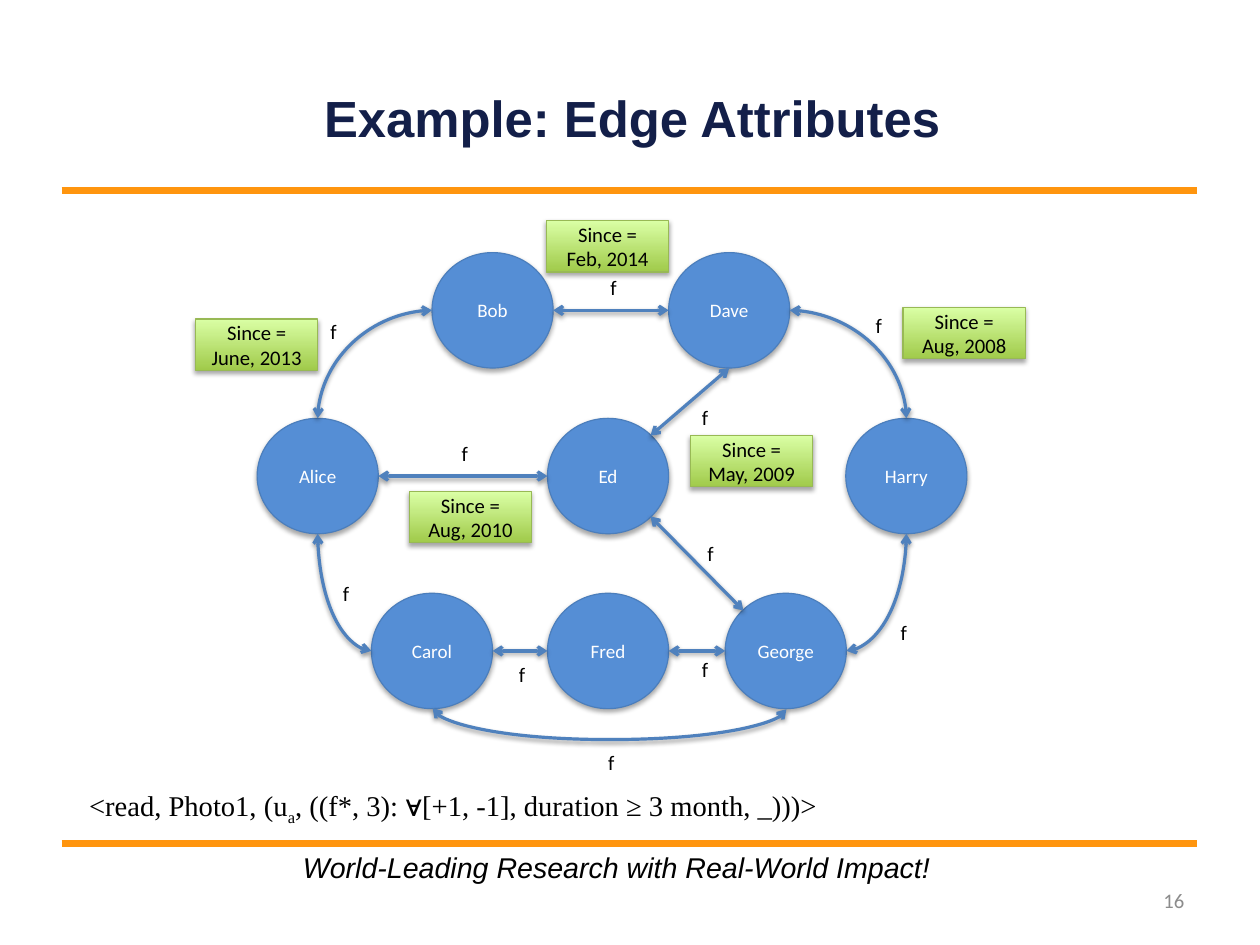
from lxml.etree import SubElement
from pptx import Presentation
from pptx.dml.color import RGBColor
from pptx.enum.shapes import MSO_CONNECTOR, MSO_SHAPE
from pptx.enum.text import MSO_ANCHOR, PP_ALIGN
from pptx.oxml.ns import qn
from pptx.util import Cm, Inches, Pt

WIDE, HIGH = Cm(28), Cm(21)
CELL = 0.1
DISC = (10.6, 10.1)
NOTE = (10.7, 4.5)
BLUE = "4F81BD"
SIDES = {"top": (0.5, 0), "left": (0, 0.5), "base": (0.5, 1), "right": (1, 0.5),
         "high": (0.85, 0.15), "low": (0.85, 0.85), "near": (0.15, 0.15)}
NODES = {"George": (46.35, 32.6), "Fred": (30.8, 32.6), "Carol": (15.4, 32.6),
         "Harry": (56.9, 17.3), "Ed": (30.8, 17.3), "Alice": (5.4, 17.3),
         "Dave": (41.4, 2.8), "Bob": (20.7, 2.8)}
BENDS = [("Bob", "left", "Alice", "top"), ("Dave", "right", "Harry", "top"),
         ("Carol", "left", "Alice", "base"), ("George", "right", "Harry", "base")]
EDGES = [("Ed", "left", "Alice", "right"), ("Carol", "right", "Fred", "left"),
         ("Ed", "high", "Dave", "base"), ("George", "near", "Ed", "low"),
         ("George", "left", "Fred", "right"), ("Bob", "right", "Dave", "left")]
MARKS = [(10.9, 8.1), (35.4, 4.3), (58.6, 7.6), (60.8, 34.4), (22.4, 18.8), (12, 31),
         (43.4, 37.7), (43.9, 27.5), (35.2, 45.8), (27.4, 38.1), (43.4, 15.6)]
DATES = {"June, 2013": (0, 8.6), "Feb, 2014": (30.7, 0), "Aug, 2010": (18.7, 23.7),
         "May, 2009": (43.3, 18.8), "Aug, 2008": (61.9, 7.6)}


def tint(code):
    """Turn a hex string into a colour."""
    return RGBColor.from_string(code)


def spot(box, x, y):
    """Give the inches of a grid point inside a box."""
    return box[0] + x * CELL, box[1] + y * CELL


def style(frame, size, font, code, align=PP_ALIGN.LEFT, anchor=MSO_ANCHOR.TOP,
          pad=(0.11, 0.05), bold=False, slant=False):
    """Format all the text of a frame."""
    frame.margin_left = frame.margin_right = Inches(pad[0])
    frame.margin_top = frame.margin_bottom = Inches(pad[1])
    frame.vertical_anchor = anchor
    for para in frame.paragraphs:
        para.alignment = align
        for run in para.runs:
            run.font.size, run.font.name = Pt(size), font
            run.font.bold, run.font.italic = bold, slant
            run.font.color.rgb = tint(code)


def label(slide, box, text, size, font, code="000000", wrap=True, **look):
    """Add a text box."""
    frame = slide.shapes.add_textbox(*map(Inches, box)).text_frame
    frame.text = text
    frame.word_wrap = wrap
    style(frame, size, font, code, **look)
    return frame


def shade(item, alpha, drop):
    """Give a shape or line a soft shadow below it."""
    effect = SubElement(item._element.spPr, qn("a:effectLst"))
    cast = SubElement(effect, qn("a:outerShdw"), blurRad=str(Pt(3.1)), dist=str(Pt(drop)),
                      dir="5400000", rotWithShape="0")
    black = SubElement(cast, qn("a:srgbClr"), val="000000")
    SubElement(black, qn("a:alpha"), val=str(alpha * 1000))


def block(slide, kind, spot_at, size, text, points, code, edge):
    """Add a centred, shadowed shape with its text."""
    lengths = (*spot_at, size[0] * CELL, size[1] * CELL)
    shape = slide.shapes.add_shape(kind, *map(Inches, lengths))
    shape.line.color.rgb, shape.line.width = tint(edge), Pt(0.75)
    shade(shape, 35, 1.8)
    shape.text_frame.text = text
    shape.text_frame.word_wrap = True
    style(shape.text_frame, points, "Calibri", code, PP_ALIGN.CENTER, MSO_ANCHOR.MIDDLE)
    return shape


def arrow(slide, kind, start, end):
    """Add a line with an arrowhead at both ends."""
    line = slide.shapes.add_connector(kind, *map(Inches, (*start, *end)))
    line.line.color.rgb, line.line.width = tint(BLUE), Pt(2)
    for tip in ("a:headEnd", "a:tailEnd"):
        SubElement(line.line._get_or_add_ln(), qn(tip), type="arrow")
    shade(line, 38, 1.6)
    return line


def port(box, name, side):
    """Find the point on a side of a node."""
    return spot(box, *(at + share * size for at, share, size
                       in zip(NODES[name], SIDES[side], DISC)))


def loop(slide, box):
    """Add the curve that runs below Carol and George."""
    left, right = port(box, "Carol", "base"), port(box, "George", "base")
    mid, half = (left[0] + right[0]) / 2, (right[0] - left[0]) / 2
    line = arrow(slide, MSO_CONNECTOR.CURVE, (mid + 0.01, left[1] - half),
                 (mid, left[1] + half))
    form = line._element.spPr
    form.find(qn("a:xfrm")).set("rot", "16200000")
    geom = form.find(qn("a:prstGeom"))
    guides = geom.find(qn("a:avLst"))
    if guides is None:
        guides = SubElement(geom, qn("a:avLst"))
    SubElement(guides, qn("a:gd"), name="adj1", fmla="val 2800000")


def graph(slide, box):
    """Draw the friend graph with its edge notes."""
    for name, at in NODES.items():
        disc = block(slide, MSO_SHAPE.OVAL, spot(box, *at), DISC, name, 12, "FFFFFF", "4B7EBC")
        disc.fill.solid()
        disc.fill.fore_color.rgb = tint("558ED5")
    for first, side, last, goal in BENDS:
        bend = arrow(slide, MSO_CONNECTOR.CURVE, port(box, first, side), port(box, last, goal))
        bend._element.spPr.find(qn("a:prstGeom")).set("prst", "curvedConnector2")
    for first, side, last, goal in EDGES:
        arrow(slide, MSO_CONNECTOR.STRAIGHT, port(box, first, side), port(box, last, goal))
    loop(slide, box)
    for at in MARKS:
        label(slide, (*spot(box, *at), 0.2, 0.33), "f", 13, "Calibri")
    for date, at in DATES.items():
        note = block(slide, MSO_SHAPE.RECTANGLE, spot(box, *at), NOTE, f"Since = {date}",
                     13, "000000", "98B955")
        note.fill.gradient()
        note.fill.gradient_angle = 90
        for stop, code in zip(note.fill.gradient_stops, ("A0CA4A", "DAFFA5")):
            stop.color.rgb = tint(code)


def rule(slide, left, top, width):
    """Add an orange rule across the slide."""
    line = slide.shapes.add_connector(MSO_CONNECTOR.STRAIGHT,
                                      *map(Inches, (left, top, left + width, top)))
    line.line.color.rgb, line.line.width = tint("FF950E"), Pt(4.31)
    SubElement(line._element.spPr, qn("a:effectLst"))


def head(slide, box):
    """Place the title."""
    title = slide.shapes.title
    title.left, title.top, title.width, title.height = map(Inches, box)
    title.text_frame.text = "Example: Edge Attributes"
    style(title.text_frame, 32, "Arial", "131F49", PP_ALIGN.CENTER, MSO_ANCHOR.MIDDLE,
          (0, 0), bold=True)


def policy(slide, box):
    """Write the access rule with its subscript."""
    frame = label(slide, box, "<read, Photo1, (u", 18, "Times New Roman")
    para = frame.paragraphs[0]
    for text in ("a", ", ((f*, 3): ∀[+1, -1], duration ≥ 3 month, _)))>"):
        para.add_run().text = text
    style(frame, 18, "Times New Roman", "000000")
    para.runs[1]._r.get_or_add_rPr().set("baseline", "-25000")


def foot(slide, box):
    """Place the motto and the page number."""
    left, top, width, high = box
    label(slide, (left + 2, top, 5.76, 0.41), "World-Leading Research with Real-World Impact!",
          18, "Arial", wrap=False, slant=True)
    label(slide, (left + width - 2.57, top + high - 0.44, 2.57, 0.44), "16", 13, "Calibri",
          "8C8C8C", align=PP_ALIGN.RIGHT, anchor=MSO_ANCHOR.MIDDLE)


def main():
    """Build and save the slide."""
    deck = Presentation()
    deck.slide_width, deck.slide_height = WIDE, HIGH
    slide = deck.slides.add_slide(deck.slide_layouts[5])
    for top in (1.67, 7.38):
        rule(slide, 0.54, top, 9.93)
    head(slide, (2.32, 0.65, 6.43, 0.75))
    graph(slide, (1.71, 1.93))
    policy(slide, (0.67, 6.84, 7.95, 0.41))
    foot(slide, (0.54, 7.39, 9.93, 0.71))
    deck.save("out.pptx")


if __name__ == "__main__":
    main()
